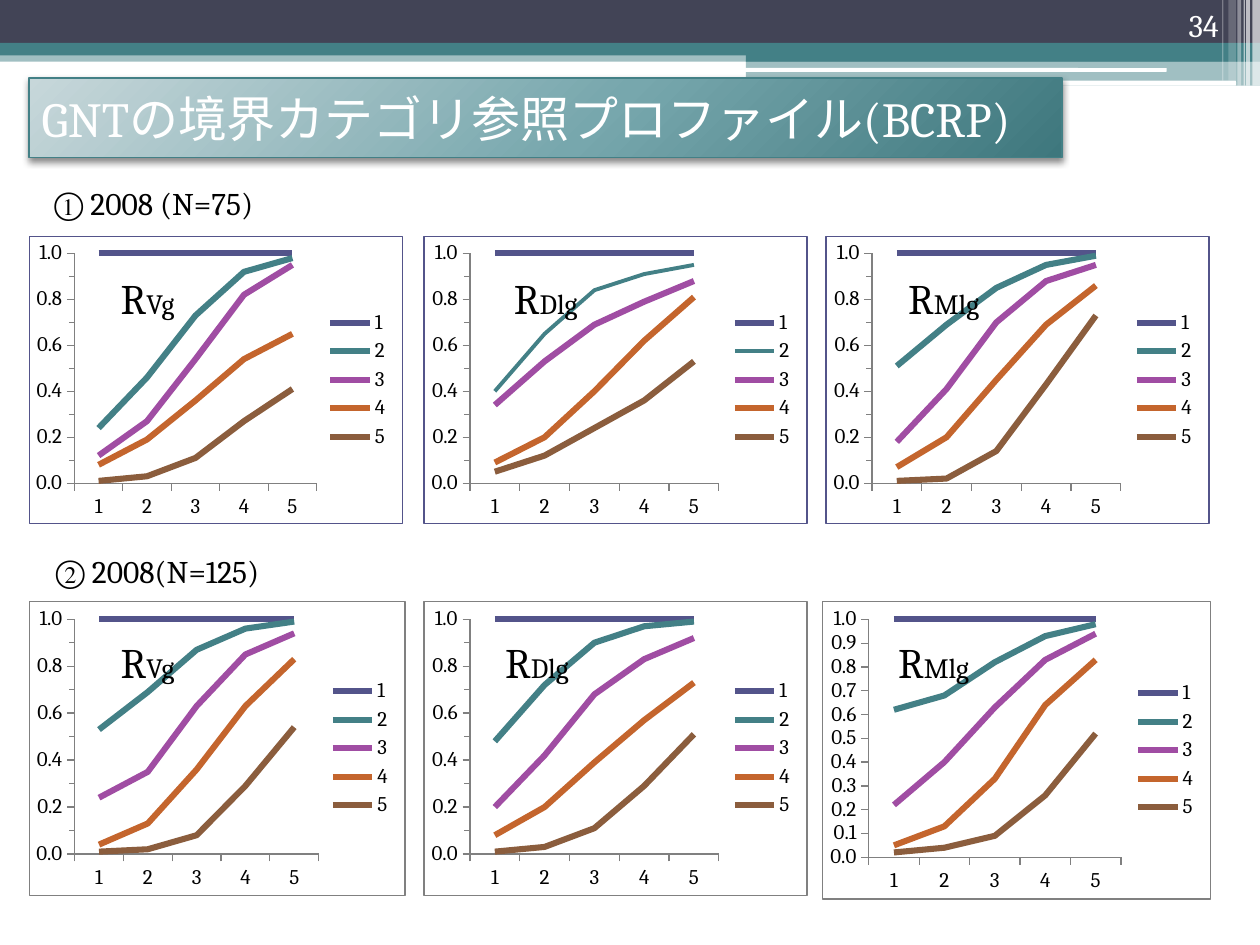
from dataclasses import dataclass

from pptx import Presentation
from pptx.chart.data import CategoryChartData
from pptx.dml.color import RGBColor
from pptx.enum.chart import XL_CHART_TYPE, XL_LEGEND_POSITION, XL_TICK_MARK
from pptx.enum.shapes import MSO_SHAPE
from pptx.enum.text import MSO_ANCHOR, MSO_AUTO_SIZE, PP_ALIGN
from pptx.oxml import parse_xml
from pptx.oxml.ns import nsdecls, qn
from pptx.util import Inches, Pt

LINE_CHART = XL_CHART_TYPE.LINE
LEGEND_RIGHT = XL_LEGEND_POSITION.RIGHT
TICK_OUTSIDE, TICK_NONE = XL_TICK_MARK.OUTSIDE, XL_TICK_MARK.NONE
RECTANGLE, ROUNDED = MSO_SHAPE.RECTANGLE, MSO_SHAPE.ROUNDED_RECTANGLE
LEFT, CENTER, RIGHT = PP_ALIGN.LEFT, PP_ALIGN.CENTER, PP_ALIGN.RIGHT
TOP, MIDDLE, BOTTOM = MSO_ANCHOR.TOP, MSO_ANCHOR.MIDDLE, MSO_ANCHOR.BOTTOM


@dataclass(frozen=True)
class Theme:
    font: str = "Cambria"
    dark: str = "424456"
    teal: str = "438086"
    white: str = "FFFFFF"
    black: str = "000000"
    gray: str = "808080"
    series: tuple = ("53548A", "438086", "A04DA3", "C4652D", "8B5D3D")
    gradient: tuple = ((0, "C7D7DA"), (55, "77A7AD"), (100, "3E777D"))
    title_size: int = 28
    symbol_size: int = 24
    heading_size: int = 18
    subscript_size: int = 16
    chart_size: int = 12


THEME = Theme()


@dataclass(frozen=True)
class Bar:
    box: tuple
    color: str
    opacity: int = 100
    kind: MSO_SHAPE = RECTANGLE


@dataclass(frozen=True)
class Profile:
    box: tuple
    border: str
    subscript: str
    label_box: tuple
    curves: tuple  # categories 2 to 5; category 1 is always 1
    major_unit: float = 0.2
    thin_curve: str = ""


BARS = (
    Bar((0, 0.4, 10, 0.09), THEME.teal, 50),
    Bar((0, 0, 10, 0.34), THEME.dark),
    Bar((0, 0.34, 10, 0.1), THEME.teal),
    Bar((5.92, 0.39, 4.08, 0.1), THEME.teal),
    Bar((5.92, 0.48, 4.08, 0.2), THEME.teal, 50),
    Bar((5.91, 0.54, 3.35, 0.03), THEME.white, kind=ROUNDED),
    Bar((8.06, 0.64, 1.75, 0.04), THEME.white, kind=ROUNDED),
    Bar((9.94, 0, 0.06, 0.68), THEME.white, 65),
    Bar((9.89, 0, 0.03, 0.68), THEME.white, 65),
    Bar((9.87, 0, 0.01, 0.68), THEME.white, 60),
    Bar((9.82, 0, 0.03, 0.68), THEME.white, 40),
    Bar((9.75, 0, 0.06, 0.64), THEME.white, 20),
    Bar((9.7, 0, 0.01, 0.64), THEME.white, 30),
)

PROFILES = (
    Profile((0.23, 1.87, 2.97, 2.29), THEME.series[0], "Vg", (0.86, 2.11, 0.7, 0.5), (
        (0.24, 0.46, 0.73, 0.92, 0.98), (0.12, 0.27, 0.54, 0.82, 0.95),
        (0.08, 0.19, 0.36, 0.54, 0.65), (0.01, 0.03, 0.11, 0.27, 0.41))),
    Profile((3.36, 1.87, 3.05, 2.29), THEME.series[0], "Dlg", (3.98, 2.11, 0.78, 0.5), (
        (0.4, 0.65, 0.84, 0.91, 0.95), (0.34, 0.53, 0.69, 0.79, 0.88),
        (0.09, 0.2, 0.4, 0.62, 0.81), (0.05, 0.12, 0.24, 0.36, 0.53)), thin_curve="2"),
    Profile((6.55, 1.87, 3.05, 2.29), THEME.series[0], "Mlg", (7.11, 2.11, 0.86, 0.5), (
        (0.51, 0.69, 0.85, 0.95, 0.99), (0.18, 0.41, 0.7, 0.88, 0.95),
        (0.07, 0.2, 0.45, 0.69, 0.86), (0.01, 0.02, 0.14, 0.43, 0.73))),
    Profile((0.23, 4.77, 2.99, 2.34), THEME.gray, "Vg", (0.86, 5, 0.7, 0.5), (
        (0.53, 0.69, 0.87, 0.96, 0.99), (0.24, 0.35, 0.63, 0.85, 0.94),
        (0.04, 0.13, 0.36, 0.63, 0.83), (0.01, 0.02, 0.08, 0.29, 0.54))),
    Profile((3.36, 4.77, 3.05, 2.34), THEME.gray, "Dlg", (3.91, 5, 0.78, 0.5), (
        (0.48, 0.72, 0.9, 0.97, 0.99), (0.2, 0.42, 0.68, 0.83, 0.92),
        (0.08, 0.2, 0.39, 0.57, 0.73), (0.01, 0.03, 0.11, 0.29, 0.51))),
    Profile((6.52, 4.77, 3.09, 2.37), THEME.gray, "Mlg", (7.03, 5, 0.86, 0.5), (
        (0.62, 0.68, 0.82, 0.93, 0.98), (0.22, 0.4, 0.63, 0.83, 0.94),
        (0.05, 0.13, 0.33, 0.64, 0.83), (0.02, 0.04, 0.09, 0.26, 0.52)), major_unit=0.1),
)


def rgb(color: str) -> RGBColor:
    return RGBColor.from_string(color)


def inches(box: tuple) -> list:
    return [Inches(length) for length in box]


def draw_bar(slide, bar: Bar) -> None:
    shape = slide.shapes.add_shape(bar.kind, *inches(bar.box))
    shape.shadow.inherit = False
    shape.fill.solid()
    shape.fill.fore_color.rgb = rgb(bar.color)
    shape.line.fill.background()
    if bar.opacity < 100:
        color = shape.element.spPr.find(f".//{qn('a:srgbClr')}")
        color.append(parse_xml(f'<a:alpha {nsdecls("a")} val="{bar.opacity * 1000}"/>'))


def add_run(paragraph, text: str, size: int, color: str = THEME.black) -> None:
    run = paragraph.add_run()
    run.text = text
    run.font.name = THEME.font
    run.font.size = Pt(size)
    run.font.color.rgb = rgb(color)


def draw_text(slide, box: tuple, runs: tuple, color: str = THEME.black,
              align: PP_ALIGN = LEFT, anchor: MSO_ANCHOR = TOP, wrap: bool = True) -> None:
    frame = slide.shapes.add_textbox(*inches(box)).text_frame
    frame.word_wrap = wrap
    frame.vertical_anchor = anchor
    paragraph = frame.paragraphs[0]
    paragraph.alignment = align
    for text, size in runs:
        add_run(paragraph, text, size, color)


def draw_title(slide, text: str) -> None:
    title = slide.shapes.title
    title.left, title.top, title.width, title.height = inches((0.23, 0.62, 8.2, 0.63))
    stops = "".join(f'<a:gs pos="{position * 1000}"><a:srgbClr val="{color}"/></a:gs>'
                    for position, color in THEME.gradient)
    title.element.spPr.append(parse_xml(
        f'<a:gradFill {nsdecls("a")} rotWithShape="1"><a:gsLst>{stops}</a:gsLst><a:path path="circle">'
        '<a:fillToRect l="-40000" t="-90000" r="140000" b="190000"/></a:path></a:gradFill>'))
    title.line.color.rgb = rgb(THEME.teal)
    title.line.width = Pt(0.75)
    title.element.spPr.append(parse_xml(
        f'<a:effectLst {nsdecls("a")}><a:outerShdw blurRad="{Pt(4)}" dist="{Pt(2)}" dir="5400000">'
        f'<a:srgbClr val="{THEME.black}"><a:alpha val="45000"/></a:srgbClr></a:outerShdw></a:effectLst>'))
    frame = title.text_frame
    frame.auto_size = MSO_AUTO_SIZE.NONE
    frame.word_wrap = True
    frame.vertical_anchor = MIDDLE
    frame.paragraphs[0].alignment = LEFT
    add_run(frame.paragraphs[0], text, THEME.title_size, THEME.white)
    # Bring the title in front of the header bars
    title.element.getparent().append(title.element)


def frame_chart(chart, border: str) -> None:
    """Set the outer border and the inner plot area."""
    chart.element.find(qn("c:chart")).addnext(parse_xml(
        f'<c:spPr {nsdecls("c", "a")}><a:solidFill><a:srgbClr val="{THEME.white}"/></a:solidFill>'
        f'<a:ln w="{Pt(0.75)}"><a:solidFill><a:srgbClr val="{border}"/></a:solidFill></a:ln></c:spPr>'))
    plot_area = chart.element.find(f".//{qn('c:plotArea')}")
    for layout in plot_area.findall(qn("c:layout")):
        plot_area.remove(layout)
    sizes = "".join(f'<c:{key} val="{value}"/>' for key, value in
                    (("x", 0.12), ("y", 0.06), ("w", 0.65), ("h", 0.8)))
    plot_area.insert(0, parse_xml(
        f'<c:layout {nsdecls("c")}><c:manualLayout><c:layoutTarget val="inner"/>'
        f'<c:xMode val="edge"/><c:yMode val="edge"/>{sizes}</c:manualLayout></c:layout>'))


def draw_profile(slide, profile: Profile) -> None:
    data = CategoryChartData(number_format="0.0")
    data.categories = ["1", "2", "3", "4", "5"]
    for number, values in enumerate(((1,) * 5, *profile.curves), start=1):
        data.add_series(str(number), values)
    chart = slide.shapes.add_chart(LINE_CHART, *inches(profile.box), data).chart
    chart.has_title = False
    chart.font.name = THEME.font
    chart.font.size = Pt(THEME.chart_size)
    chart.font.color.rgb = rgb(THEME.black)
    chart.has_legend = True
    chart.legend.position = LEGEND_RIGHT
    chart.legend.include_in_layout = False
    chart.plots[0].vary_by_categories = False
    for series, color in zip(chart.plots[0].series, THEME.series):
        series.smooth = False
        series.format.line.color.rgb = rgb(color)
        series.format.line.width = Pt(2.25 if series.name == profile.thin_curve else 3.5)
    for axis in (chart.category_axis, chart.value_axis):
        axis.has_major_gridlines = False
        axis.major_tick_mark = TICK_OUTSIDE
        axis.minor_tick_mark = TICK_NONE
        axis.format.line.color.rgb = rgb(THEME.gray)
    scale = chart.value_axis
    scale.minimum_scale, scale.maximum_scale = 0, 1
    scale.major_unit, scale.minor_unit = profile.major_unit, 0.1
    if profile.major_unit > 0.1:
        scale.minor_tick_mark = TICK_OUTSIDE
    scale.tick_labels.number_format = "0.0"
    scale.tick_labels.number_format_is_linked = False
    frame_chart(chart, profile.border)
    draw_text(slide, profile.label_box,
              (("R", THEME.symbol_size), (profile.subscript, THEME.subscript_size)), wrap=False)


def main() -> None:
    presentation = Presentation()
    presentation.slide_width, presentation.slide_height = Inches(10), Inches(7.5)
    slide = presentation.slides.add_slide(presentation.slide_layouts[5])
    # Header
    for bar in BARS:
        draw_bar(slide, bar)
    draw_text(slide, (8.94, 0, 0.83, 0.4), (("34", THEME.heading_size),), THEME.white, RIGHT, BOTTOM)
    draw_title(slide, "GNTの境界カテゴリ参照プロファイル(BCRP)")
    # Profile charts with their labels
    for profile in PROFILES:
        draw_profile(slide, profile)
    # Row headings
    for box, heading in (((0.23, 1.41, 1.98, 0.4), "① 2008 (N=75)"),
                         ((0.23, 4.33, 2.04, 0.4), "② 2008(N=125)")):
        draw_text(slide, box, ((heading, THEME.heading_size),), align=CENTER, wrap=False)
    presentation.save("out.pptx")


if __name__ == "__main__":
    main()
